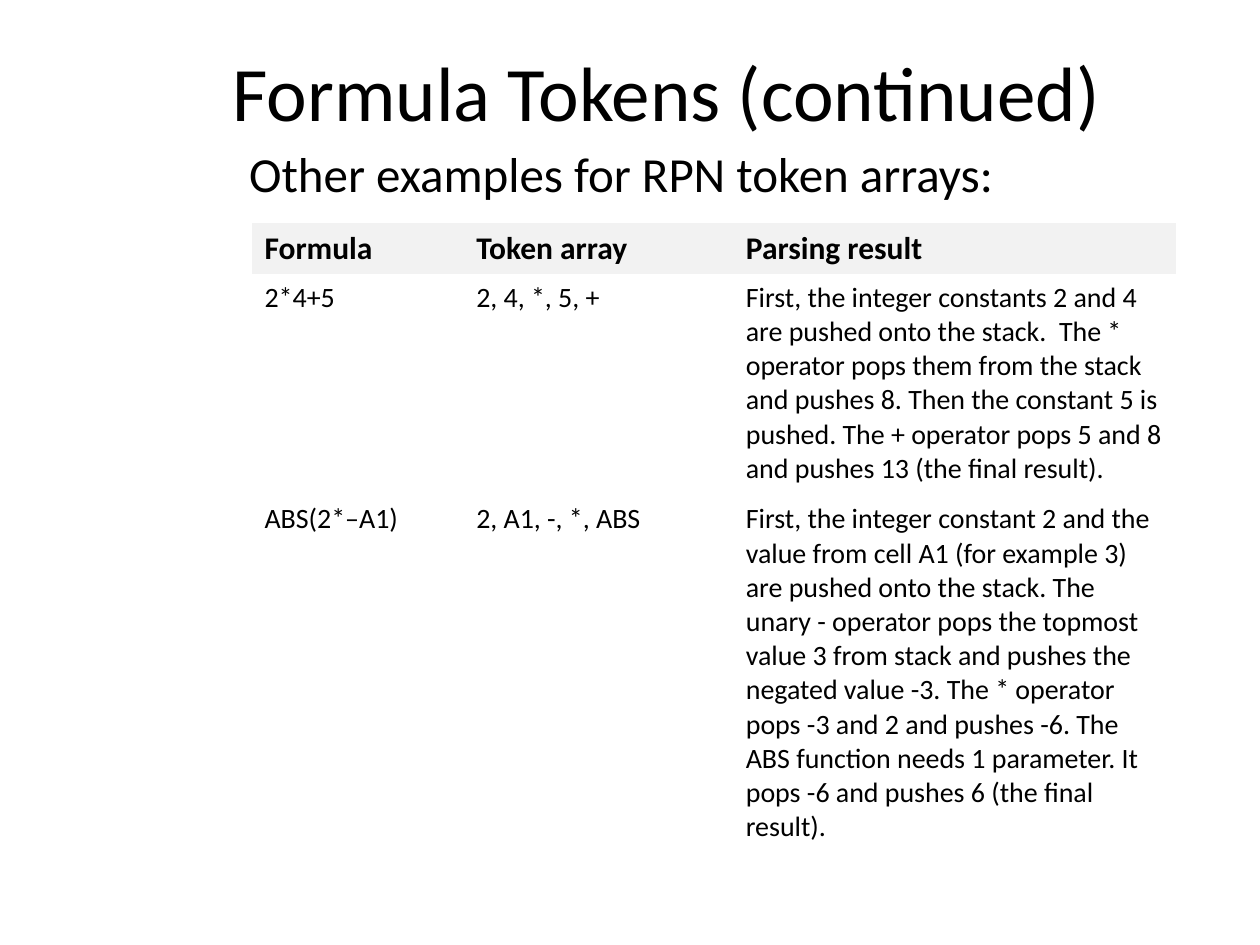
import pptx
import pptx.util
import pptx.dml.color
import pptx.enum.text

Inches = pptx.util.Inches
FONT = "Calibri"
COLORS = {"text": "000000", "head": "F2F2F2"}

TITLE = "Formula Tokens (continued)"
INTRO = "Other examples for RPN token arrays:"
ROWS = [
    ("Formula", "Token array", "Parsing result"),
    ("2*4+5", "2, 4, *, 5, +",
     "First, the integer constants 2 and 4 are pushed onto the stack.  "
     "The * operator pops them from the stack and pushes 8. Then the "
     "constant 5 is pushed. The + operator pops 5 and 8 and pushes 13 "
     "(the final result)."),
    ("ABS(2*–A1)", "2, A1, -, *, ABS",
     "First, the integer constant 2 and the value from cell A1 (for "
     "example 3) are pushed onto the stack. The unary - operator pops the "
     "topmost value 3 from stack and pushes the negated value -3. The * "
     "operator pops -3 and 2 and pushes -6. The ABS function needs 1 "
     "parameter. It pops -6 and pushes 6 (the final result)."),
    ("", "", ""),
]
WIDTHS = [1.68, 2.14, 3.51]
HEIGHTS = [0.38, 1.76, 2.64, 0.3]


def color(name):
    return pptx.dml.color.RGBColor.from_string(COLORS[name])


def write(frame, text, size, bold=False):
    par = frame.paragraphs[0]
    par.font.size = pptx.util.Pt(size)
    if text:
        run = par.add_run()
        run.text = text
        run.font.name = FONT
        run.font.size = pptx.util.Pt(size)
        run.font.bold = bold
        run.font.color.rgb = color("text")
    return par


def add_title(slide):
    title = slide.shapes.title
    title.left, title.top = Inches(1.08), Inches(0.3)
    title.width, title.height = Inches(8.42), Inches(1.25)
    frame = title.text_frame
    frame.vertical_anchor = pptx.enum.text.MSO_ANCHOR.TOP
    write(frame, TITLE, 44).alignment = pptx.enum.text.PP_ALIGN.CENTER


def add_intro(slide):
    box = slide.shapes.add_textbox(
        Inches(1.88), Inches(1.09), Inches(6.17), Inches(0.57))
    frame = box.text_frame
    frame.word_wrap = False
    frame.auto_size = pptx.enum.text.MSO_AUTO_SIZE.SHAPE_TO_FIT_TEXT
    write(frame, INTRO, 28)


def add_examples(slide):
    table = slide.shapes.add_table(
        len(ROWS), len(WIDTHS), Inches(2), Inches(1.77),
        Inches(sum(WIDTHS)), Inches(sum(HEIGHTS))).table
    table.first_row = table.horz_banding = False
    # The "No Style, No Grid" table style keeps the cells free of borders.
    table._tbl.tblPr.find(pptx.oxml.ns.qn("a:tableStyleId")).text = (
        "{2D5ABB26-0587-4C30-8999-92F81FD0307C}")
    for col, width in zip(table.columns, WIDTHS):
        col.width = Inches(width)
    for r, (texts, height) in enumerate(zip(ROWS, HEIGHTS)):
        table.rows[r].height = Inches(height)
        head = r == 0
        for c, text in enumerate(texts):
            cell = table.cell(r, c)
            if head:
                cell.fill.solid()
                cell.fill.fore_color.rgb = color("head")
            else:
                cell.fill.background()
            write(cell.text_frame, text, 18 if head else 16, head)


def main():
    deck = pptx.Presentation()
    deck.slide_width, deck.slide_height = Inches(10), Inches(7.5)
    slide = deck.slides.add_slide(deck.slide_layouts.get_by_name("Title Only"))
    add_examples(slide)
    add_intro(slide)
    add_title(slide)
    deck.save("out.pptx")


if __name__ == "__main__":
    main()
